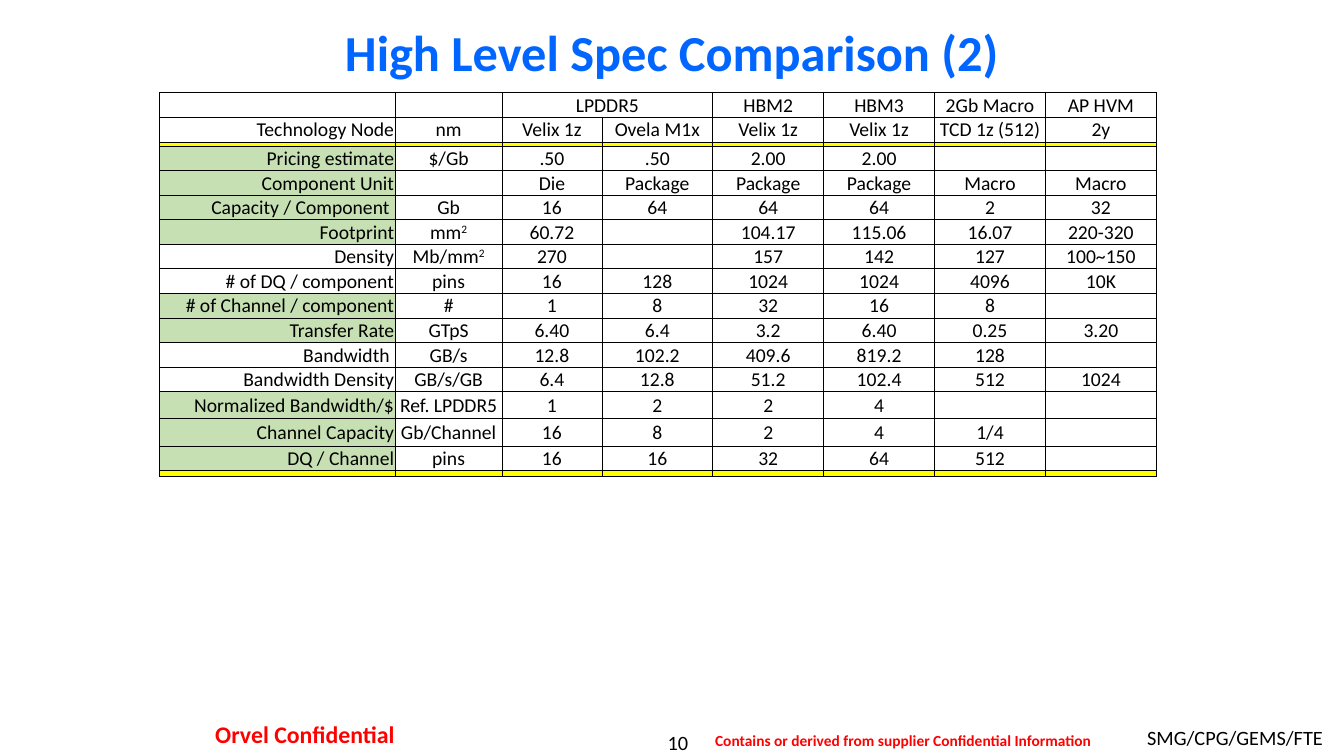
"""Build the memory spec comparison slide."""
from lxml.etree import SubElement as Sub
from pptx import Presentation as Deck
from pptx.dml.color import RGBColor as Rgb
from pptx.enum.text import MSO_ANCHOR as Anchor, PP_ALIGN as Align
from pptx.oxml.ns import qn
from pptx.util import Inches, Pt

FONT, BLACK, RED, BLUE = "Calibri", "000000", "FF0000", "0066FF"
GREEN, YELLOW = "C6E0B4", "FFFF00"
WIDE = [2.34, 1.06, 0.99] + [1.1] * 5
ROWS = [
    ["", "", "LPDDR5", "", "HBM2", "HBM3", "2Gb Macro", "AP HVM"],
    ["Technology Node", "nm", "Velix 1z", "Ovela M1x", "Velix 1z", "Velix 1z", "TCD 1z (512)", "2y"],
    [""] * 8,
    ["Pricing estimate", "$/Gb", ".50", ".50", "2.00", "2.00", "", ""],
    ["Component Unit", "", "Die", "Package", "Package", "Package", "Macro", "Macro"],
    ["Capacity / Component ", "Gb", "16", "64", "64", "64", "2", "32"],
    ["Footprint", "mm^2", "60.72", "", "104.17", "115.06", "16.07", "220-320"],
    ["Density", "Mb/mm^2", "270", "", "157", "142", "127", "100~150"],
    ["# of DQ / component", "pins", "16", "128", "1024", "1024", "4096", "10K"],
    ["# of Channel / component", "#", "1", "8", "32", "16", "8", ""],
    ["Transfer Rate", "GTpS", "6.40", "6.4", "3.2", "6.40", "0.25", "3.20"],
    ["Bandwidth ", "GB/s", "12.8", "102.2", "409.6", "819.2", "128", ""],
    ["Bandwidth Density", "GB/s/GB", "6.4", "12.8", "51.2", "102.4", "512", "1024"],
    ["Normalized Bandwidth/$", "Ref. LPDDR5", "1", "2", "2", "4", "", ""],
    ["Channel Capacity", "Gb/Channel", "16", "8", "2", "4", "1/4", ""],
    ["DQ / Channel", "pins", "16", "16", "32", "64", "512", ""],
    [""] * 8,
]
LAST = len(ROWS) - 1
BARS = {2: 0.04, LAST: 0.06}
TALL = {13: 0.27, 14: 0.27, **BARS}
MARKED = {3, 4, 5, 6, 9, 10, 13, 14, 15}


def tint(code):
    """Turn a hex string into a colour."""
    return Rgb.from_string(code)


class Page:
    """Hold the style and the current slide."""

    def __init__(self, deck):
        """Add a blank slide."""
        self.slide = deck.slides.add_slide(deck.slide_layouts[6])

    def style(self, run, size, color=BLACK, bold=False):
        """Format one run."""
        font = run.font
        font.name, font.size, font.bold = FONT, Pt(size), bold
        font.color.rgb = tint(color)

    def text(self, words, box, size, color=BLACK, bold=False,
             side=Align.CENTER, pad=(0.1, 0.05), anchor=Anchor.TOP):
        """Place one line of text."""
        frame = self.slide.shapes.add_textbox(*map(Inches, box)).text_frame
        frame.text = words
        frame.word_wrap = True
        frame.vertical_anchor = anchor
        frame.margin_left = frame.margin_right = Inches(pad[0])
        frame.margin_top = frame.margin_bottom = Inches(pad[1])
        line = frame.paragraphs[0]
        line.alignment = side
        self.style(line.runs[0], size, color, bold)

    def edges(self, cell, top, right, bottom):
        """Draw the four borders of a cell."""
        props = cell._tc.get_or_add_tcPr()
        for name, width in zip("LRTB", (0.5, right, top, bottom)):
            line = Sub(props, qn("a:ln" + name), w=str(Pt(width)))
            Sub(Sub(line, qn("a:solidFill")), qn("a:srgbClr"), val=BLACK)

    def cell(self, cell, words, side, fill, tiny):
        """Fill and label a cell."""
        if fill:
            cell.fill.solid()
            cell.fill.fore_color.rgb = tint(fill)
        else:
            cell.fill.background()
        cell.margin_left = cell.margin_right = Inches(0.01)
        cell.margin_top = Inches(0 if tiny else 0.01)
        cell.margin_bottom = 0
        cell.vertical_anchor = Anchor.MIDDLE
        base, _, power = words.partition("^")
        line = cell.text_frame.paragraphs[0]
        line.text = base
        line.alignment = side
        if power:
            line.add_run().text = power
        for run in line.runs:
            self.style(run, 14)
        if power:
            line.runs[1].font._element.set("baseline", "30000")
        if not words:
            Sub(line._p, qn("a:endParaRPr"), sz="100" if tiny else "1400")

    def table(self, left, top):
        """Draw the comparison table."""
        highs = [TALL.get(row, 0.24) for row in range(len(ROWS))]
        box = map(Inches, (left, top, sum(WIDE), sum(highs)))
        table = self.slide.shapes.add_table(len(ROWS), len(WIDE), *box).table
        table.first_row = table.horz_banding = False
        for col, wide in zip(table.columns, WIDE):
            col.width = Inches(wide)
        for row, high in zip(table.rows, highs):
            row.height = Inches(high)
        table.cell(0, 2).merge(table.cell(0, 3))
        for r, row in enumerate(ROWS):
            for c, words in enumerate(row):
                cell = table.cell(r, c)
                self.edges(cell, 1 if r == 0 else 0.5,
                           1 if c == len(WIDE) - 1 else 0.5,
                           1 if r == LAST else 0.5)
                green = GREEN if c == 0 and r in MARKED else None
                self.cell(cell, words, Align.CENTER if c else Align.RIGHT,
                          YELLOW if r in BARS else green, r in BARS)


def main():
    """Build and save the deck."""
    deck = Deck()
    deck.slide_width, deck.slide_height = Inches(13.33), Inches(7.5)
    page = Page(deck)
    page.text("10", (5.56, 7.24, 2.33, 0.24), 14.5, pad=(0, 0))
    page.text("SMG/CPG/GEMS/FTE", (8.83, 7.15, 4.39, 0.35), 14.5, side=Align.RIGHT)
    page.text("Orvel Confidential", (1.55, 7.08, 2.95, 0.41), 17, RED, True, pad=(0.12, 0.06))
    page.text("Contains or derived from supplier Confidential Information",
              (6.92, 7.19, 4.08, 0.31), 11, RED, True, pad=(0.12, 0.06))
    page.text("High Level Spec Comparison (2)", (1, 0.17, 11.33, 0.67), 36,
              BLUE, True, anchor=Anchor.MIDDLE)
    page.table(1.58, 0.92)
    deck.save("out.pptx")


if __name__ == "__main__":
    main()
